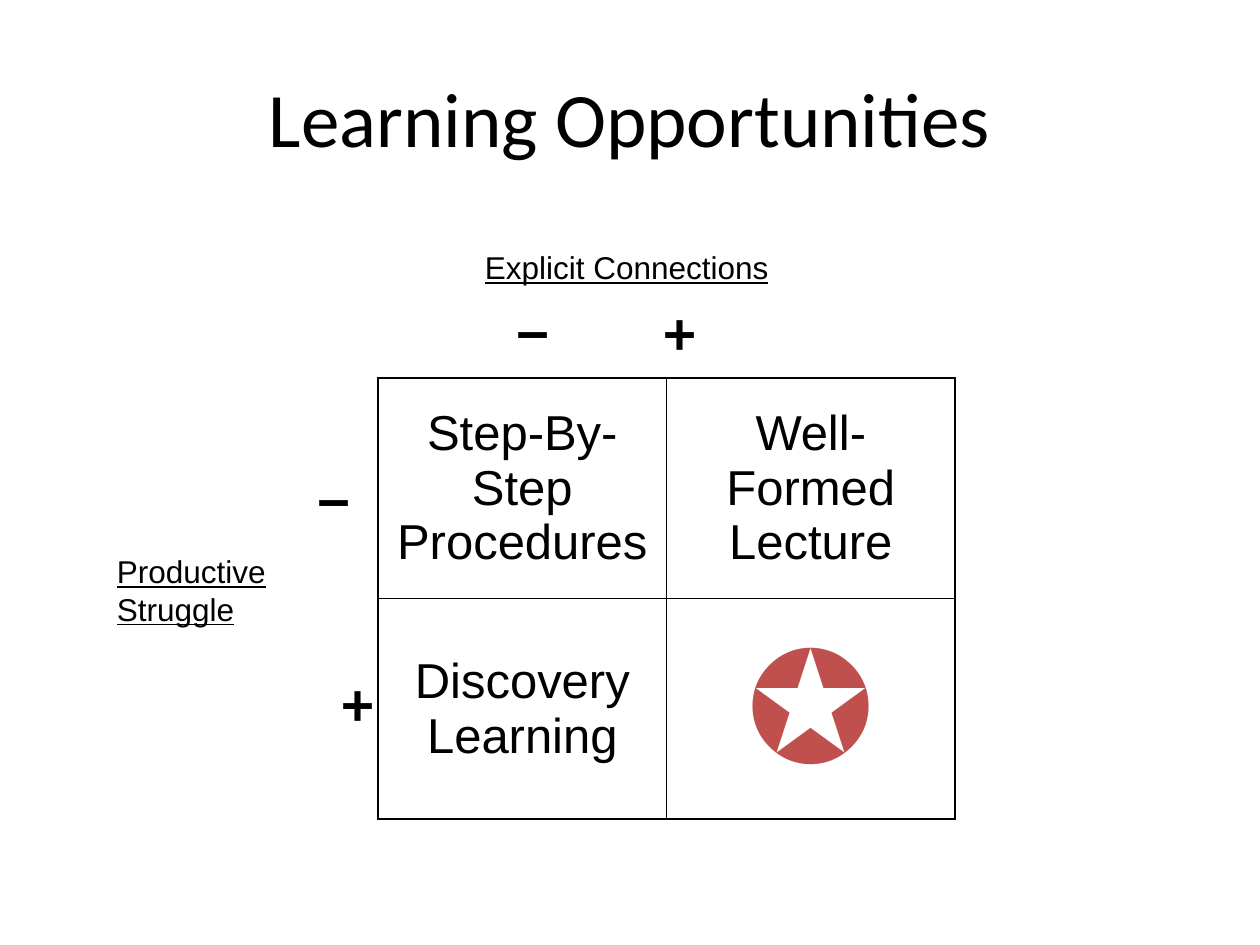
from lxml import etree
from pptx import Presentation
from pptx.dml.color import RGBColor
from pptx.enum import text
from pptx.oxml import ns
from pptx.util import Pt

BLACK = RGBColor(0x00, 0x00, 0x00)
RED = RGBColor(0xC0, 0x50, 0x4D)
TITLE_FONT, BODY_FONT, SIGN_FONT = "Calibri", "Arial", "Noto Sans CJK JP"


def sub(parent, tag, **attrs):
    return etree.SubElement(parent, ns.qn(tag), attrs)


class Deck:
    """Holds the style and the current slide; lengths are in points."""

    def __init__(self, prs):
        self.prs = prs
        self.s = prs.slides.add_slide(prs.slide_layouts[5])

    def run(self, p, words, size, font=BODY_FONT, color=BLACK, bold=False, underline=False):
        r = p.add_run()
        r.text = words
        f = r.font
        f.size, f.name, f.bold, f.underline = Pt(size), font, bold, underline
        f.color.rgb = color

    def title(self, words, x, y, w, h):
        sp = self.s.shapes.title
        sp.left, sp.top, sp.width, sp.height = Pt(x), Pt(y), Pt(w), Pt(h)
        tf = sp.text_frame
        tf.vertical_anchor = text.MSO_ANCHOR.MIDDLE
        p = tf.paragraphs[0]
        p.alignment = text.PP_ALIGN.CENTER
        self.run(p, words, 44, TITLE_FONT)

    def paragraphs(self, x, y, w, h, lines, wrap, **style):
        """Add a text box and return its paragraphs, one for each line."""
        tf = self.s.shapes.add_textbox(Pt(x), Pt(y), Pt(w), Pt(h)).text_frame
        tf.word_wrap = wrap
        for i, line in enumerate(lines):
            p = tf.add_paragraph() if i else tf.paragraphs[0]
            self.run(p, line, **style)
        return tf.paragraphs

    def axis_label(self, x, y, w, h, *lines):
        self.paragraphs(x, y, w, h, lines, False, size=18, underline=True)

    def signs(self, x, y, w, h, *lines):
        ps = self.paragraphs(x, y, w, h, lines, True, size=32, font=SIGN_FONT, bold=True)
        for p in ps:
            p.line_spacing = Pt(39)
            for r in p.runs:
                sub(r.font._element, "a:ea", typeface=SIGN_FONT)
        return ps

    def grid(self, x, y, w, h, rows):
        """Add a bordered table; each cell is (words, size, color)."""
        tbl = self.s.shapes.add_table(len(rows), len(rows[0]), Pt(x), Pt(y), Pt(w), Pt(h)).table
        tbl.first_row = tbl.horz_banding = False
        for i, row in enumerate(rows):
            for j, (words, size, color) in enumerate(row):
                cell = tbl.cell(i, j)
                cell.vertical_anchor = text.MSO_ANCHOR.MIDDLE
                p = cell.text_frame.paragraphs[0]
                p.alignment = text.PP_ALIGN.CENTER
                self.run(p, words, size, color=color)
                self.borders(cell)
                cell.fill.background()

    def borders(self, cell):
        for side in ("a:lnL", "a:lnR", "a:lnT", "a:lnB"):
            ln = sub(cell._tc.get_or_add_tcPr(), side, w=str(Pt(1)))
            sub(sub(ln, "a:solidFill"), "a:srgbClr", val=str(BLACK))


def main():
    prs = Presentation()
    prs.slide_width, prs.slide_height = Pt(720), Pt(540)
    deck = Deck(prs)
    deck.title("Learning Opportunities", 36, 21.6, 648, 90)
    deck.grid(216, 216, 329.76, 252, [
        [("Step-By-Step Procedures", 28, BLACK), ("Well-Formed Lecture", 28, BLACK)],
        [("Discovery Learning", 28, BLACK), ("✪", 88, RED)],
    ])
    deck.axis_label(270, 138.24, 178.56, 28.8, "Explicit Connections")
    deck.axis_label(59.76, 311.76, 100, 51.12, "Productive", "Struggle")

    across = deck.signs(288, 167.76, 264, 46, "−\t+")[0]
    tabs = sub(across._p.get_or_add_pPr(), "a:tabLst")
    sub(tabs, "a:tab", pos=str(Pt(84)), algn="l")

    plus = deck.signs(174.24, 263.5, 60, 162.7, "−", "+")[1]
    plus.space_before = Pt(77)
    plus._p.get_or_add_pPr().set("marL", str(Pt(14)))
    prs.save("out.pptx")


if __name__ == "__main__":
    main()
